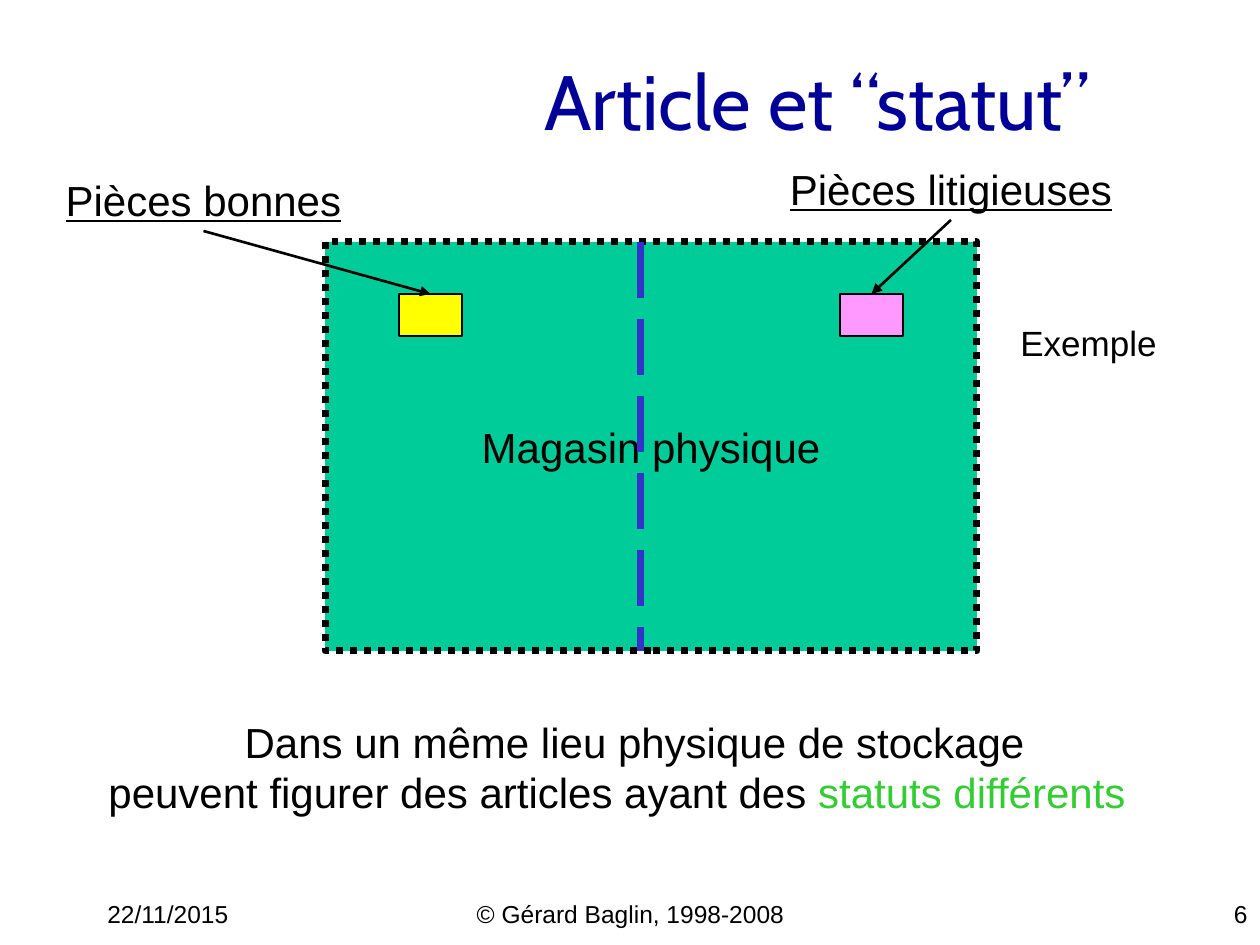
from lxml.etree import SubElement
from pptx import Presentation
from pptx.dml.color import RGBColor
from pptx.enum.dml import MSO_LINE as Dash
from pptx.enum.shapes import MSO_CONNECTOR as Connector, MSO_SHAPE as Shape
from pptx.enum.text import MSO_ANCHOR as Anchor, PP_ALIGN as Align
from pptx.oxml.ns import qn
from pptx.util import Emu, Pt

BLACK = RGBColor(0x00, 0x00, 0x00)
NAVY = RGBColor(0x00, 0x00, 0x99)
TEAL = RGBColor(0x00, 0xCC, 0x99)
YELLOW = RGBColor(0xFF, 0xFF, 0x00)
PINK = RGBColor(0xFF, 0x99, 0xFF)
INDIGO = RGBColor(0x33, 0x33, 0xCC)
GREEN = RGBColor(0x33, 0xCC, 0x33)

TITLE = ("Article et “statut”", (32, 21, 1071, 158))
FOOTERS = [
    ("22/11/2015", (95, 893, 262, 32), Align.LEFT),
    ("© Gérard Baglin, 1998-2008", (431, 893, 399, 32), Align.CENTER),
    ("6", (998, 893, 262, 32), Align.RIGHT),
]
STORE = ("Magasin physique", (325, 242, 652, 409))
DIVIDER_X = 641
PIECES = [
    ("Pièces bonnes", (51, 168, 305, 63), (399, 294), YELLOW),
    ("Pièces litigieuses", (775, 157, 352, 63), (840, 294), PINK),
]
PIECE_SIZE = (63, 42)
EXAMPLE = ("Exemple", (1004, 315, 169, 54))
CONCLUSION = [
    ([("Dans un même lieu physique de stockage", BLACK)], 0),
    ([("peuvent figurer des articles ayant des ", BLACK), ("statuts différents", GREEN)], 35),
]
CONCLUSION_BOX = (95, 710, 1079, 114)


def px(length):
    return Emu(round(length * 914400 / 126))


def add_run(paragraph, text, size, color=BLACK, font="Arial", underline=None):
    run = paragraph.add_run()
    run.text = text
    run.font.size = Pt(size)
    run.font.name = font
    run.font.color.rgb = color
    run.font.underline = underline


def add_text(box, text, size, align=Align.CENTER, anchor=Anchor.MIDDLE, **style):
    label = slide.shapes.add_textbox(*map(px, box))
    label.text_frame.word_wrap = False
    label.text_frame.vertical_anchor = anchor
    paragraph = label.text_frame.paragraphs[0]
    paragraph.alignment = align
    add_run(paragraph, text, size, **style)
    return label


def add_box(box, fill, line_width):
    rect = slide.shapes.add_shape(Shape.RECTANGLE, *map(px, box))
    rect.shadow.inherit = False
    rect.fill.solid()
    rect.fill.fore_color.rgb = fill
    rect.line.color.rgb = BLACK
    rect.line.width = Pt(line_width)
    return rect


def add_line(start, end, color, width):
    line = slide.shapes.add_connector(Connector.STRAIGHT, *map(px, start + end))
    line.line.color.rgb = color
    line.line.width = Pt(width)
    SubElement(line._element.spPr, qn("a:effectLst"))
    return line


deck = Presentation()
deck.slide_width, deck.slide_height = px(1260), px(945)
slide = deck.slides.add_slide(deck.slide_layouts[6])

for text, box, align in FOOTERS:
    add_text(box, text, 14, align, Anchor.TOP)

title, title_box = TITLE
add_text(title_box, title, 44, Align.RIGHT, color=NAVY, font="Cabin")

store_text, store_box = STORE
store = add_box(store_box, TEAL, 4)
store.line.dash_style = Dash.ROUND_DOT
store.text_frame.word_wrap = False
store.text_frame.vertical_anchor = Anchor.MIDDLE
store_line = store.text_frame.paragraphs[0]
store_line.alignment = Align.CENTER
add_run(store_line, store_text, 24)

store_top, store_height = store_box[1], store_box[3]
divider = add_line((DIVIDER_X, store_top), (DIVIDER_X, store_top + store_height), INDIGO, 4)
divider.line.dash_style = Dash.LONG_DASH

for text, box, corner, color in PIECES:
    piece = add_box(corner + PIECE_SIZE, color, 0.75)
    label = add_text(box, text, 24, underline=True)
    arrow = add_line((0, 0), corner, BLACK, 1.5)
    arrow.begin_connect(label, 2)
    arrow.end_connect(piece, 0)
    SubElement(arrow.line._get_or_add_ln(), qn("a:tailEnd"), type="triangle")

conclusion = slide.shapes.add_textbox(*map(px, CONCLUSION_BOX)).text_frame
conclusion.word_wrap = True
conclusion.vertical_anchor = Anchor.MIDDLE
conclusion.margin_left = conclusion.margin_right = 0
for index, (runs, right_indent) in enumerate(CONCLUSION):
    paragraph = conclusion.add_paragraph() if index else conclusion.paragraphs[0]
    paragraph.alignment = Align.CENTER
    paragraph._p.get_or_add_pPr().set("marR", str(px(right_indent)))
    for text, color in runs:
        add_run(paragraph, text, 24, color)

example, example_box = EXAMPLE
add_text(example_box, example, 20)

deck.save("out.pptx")
